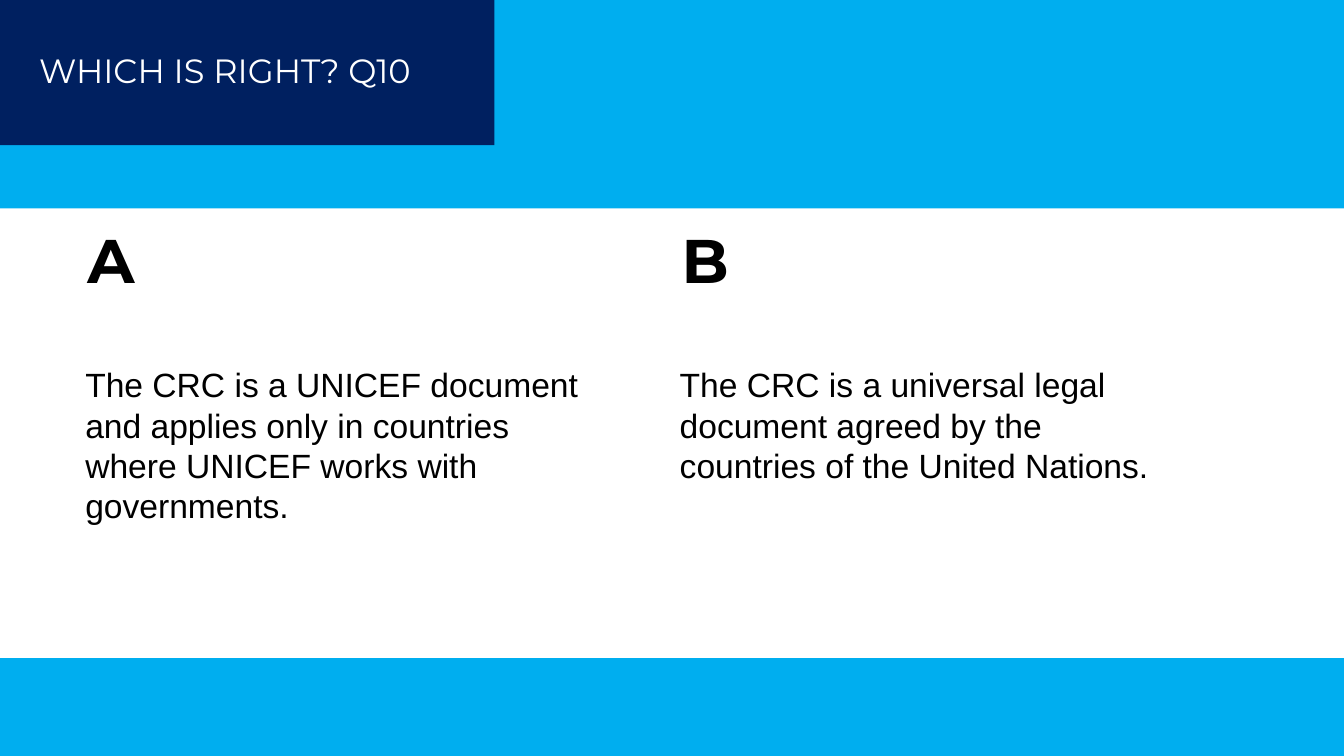
from pptx import Presentation
from pptx.dml.color import RGBColor
from pptx.enum import shapes, text
from pptx.util import Cm, Pt

SKY = RGBColor(0x00, 0xAE, 0xEF)
NAVY = RGBColor(0x00, 0x20, 0x60)
WHITE = RGBColor(0xFF, 0xFF, 0xFF)
BLACK = RGBColor(0x00, 0x00, 0x00)

TITLE = "WHICH IS RIGHT? Q10"
ANSWERS = [
    ("A", "The CRC is a UNICEF document and applies only in countries "
          "where UNICEF works with governments.", 12.93),
    ("B", "The CRC is a universal legal document agreed by the countries "
          "of the United Nations.", 12.42),
]

TITLE_FONT = dict(name="Montserrat", size=Pt(24), bold=False)
LETTER_FONT = dict(name="Montserrat", size=Pt(44), bold=True)
ANSWER_FONT = dict(name="Arial", size=Pt(24), bold=False)

WIDTH, HEIGHT = 33.87, 19.05
PANELS = [
    (0, 5.25, WIDTH, 11.33, WHITE),
    (0, 0, 12.46, 3.66, NAVY),
]
LEFT, COLUMN_STEP = 1.9, 14.98
LETTER_TOP, ANSWER_TOP = 5.3, 9.05


def add_panel(s, x, y, w, h, color):
    sp = s.shapes.add_shape(shapes.MSO_SHAPE.RECTANGLE, Cm(x), Cm(y), Cm(w), Cm(h))
    sp.shadow.inherit = False
    sp.fill.solid()
    sp.fill.fore_color.rgb = color
    sp.line.fill.background()


def add_text(s, words, x, y, w, h, font, color, inset=None):
    tf = s.shapes.add_textbox(Cm(x), Cm(y), Cm(w), Cm(h)).text_frame
    tf.word_wrap = True
    tf.auto_size = text.MSO_AUTO_SIZE.SHAPE_TO_FIT_TEXT
    if inset is not None:
        for side in ("left", "top", "right", "bottom"):
            setattr(tf, f"margin_{side}", Cm(inset))
    r = tf.paragraphs[0].add_run()
    r.text = words
    for key, value in font.items():
        setattr(r.font, key, value)
    r.font.color.rgb = color


def main():
    prs = Presentation()
    prs.slide_width, prs.slide_height = Cm(WIDTH), Cm(HEIGHT)
    s = prs.slides.add_slide(prs.slide_layouts[6])
    s.background.fill.solid()
    s.background.fill.fore_color.rgb = SKY

    for panel in PANELS:
        add_panel(s, *panel)
    add_text(s, TITLE, 0.74, 1.14, 11.02, 1.27, TITLE_FONT, WHITE)

    for i, (letter, answer, width) in enumerate(ANSWERS):
        x = LEFT + i * COLUMN_STEP
        add_text(s, letter, x, LETTER_TOP, 1.88, 2.49, LETTER_FONT, BLACK, 0.3)
        add_text(s, answer, x, ANSWER_TOP, width, 4.37, ANSWER_FONT, BLACK)

    prs.save("out.pptx")


if __name__ == "__main__":
    main()
